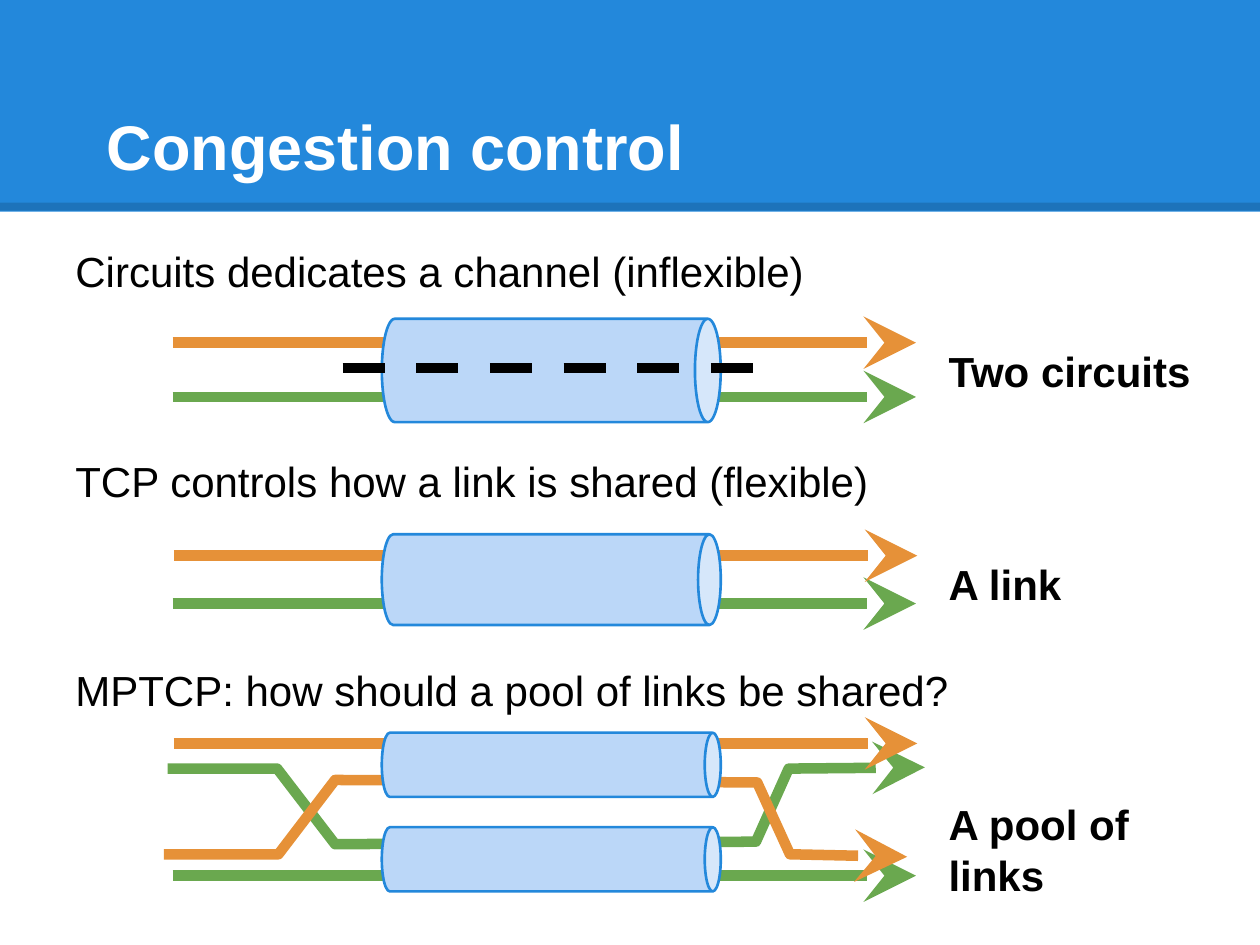
from lxml.etree import SubElement
from pptx import Presentation
from pptx.dml.color import RGBColor
from pptx.enum.dml import MSO_LINE_DASH_STYLE as DASH
from pptx.enum.shapes import MSO_CONNECTOR as CONNECTOR, MSO_SHAPE as SHAPE
from pptx.enum.text import MSO_ANCHOR as ANCHOR
from pptx.oxml.ns import qn
from pptx.util import Inches, Pt

BLUE = RGBColor(0x23, 0x88, 0xDB)
PALE_BLUE = RGBColor(0xBB, 0xD7, 0xF8)
GREEN = RGBColor(0x6A, 0xA8, 0x4F)
ORANGE = RGBColor(0xE6, 0x91, 0x38)
BLACK = RGBColor(0, 0, 0)
WHITE = RGBColor(0xFF, 0xFF, 0xFF)


class Board:
    font = "Arial"
    flow_width = 6

    def __init__(self, slide):
        self.s = slide

    def text(self, box, lines, size=24, color=BLACK, bold=False,
             anchor=ANCHOR.TOP, gap=0):
        """Add one paragraph per line, with gap points between them."""
        tf = self.s.shapes.add_textbox(*map(Inches, box)).text_frame
        tf.word_wrap = True
        tf.vertical_anchor = anchor
        tf.margin_left = tf.margin_right = Inches(0.1)
        tf.margin_top = tf.margin_bottom = Inches(0.1)
        tf.text = "\n".join(lines)
        for i, p in enumerate(tf.paragraphs):
            p.space_before = Pt(gap if i else 0)
            font = p.runs[0].font
            font.name, font.size, font.bold = self.font, Pt(size), bold
            font.color.rgb = color

    def band(self, height):
        sp = self.s.shapes.add_shape(SHAPE.RECTANGLE, 0, 0, Inches(10), Inches(height))
        sp.shadow.inherit = False
        sp.fill.solid()
        sp.fill.fore_color.rgb = BLUE
        sp.line.fill.background()

    def line(self, x1, y1, x2, y2, color, width=flow_width):
        sp = self.s.shapes.add_connector(
            CONNECTOR.STRAIGHT, *map(Inches, (x1, y1, x2, y2)))
        sp.line.color.rgb = color
        sp.line.width = Pt(width)
        SubElement(sp._element.spPr, qn("a:effectLst"))
        return sp

    def arrowhead(self, sp):
        SubElement(sp.line._get_or_add_ln(), qn("a:tailEnd"),
                   type="stealth", w="lg", len="lg")

    def flow(self, y, color, left=1.37):
        self.arrowhead(self.line(left, y, left + 5.9, y, color))

    def bent_flow(self, points, color):
        start, *rest = [(Inches(x), Inches(y)) for x, y in points]
        builder = self.s.shapes.build_freeform(*start)
        builder.add_line_segments(rest, close=False)
        sp = builder.convert_to_shape()
        sp.shadow.inherit = False
        sp.fill.background()
        sp.line.color.rgb = color
        sp.line.width = Pt(self.flow_width)
        SubElement(sp.line._get_or_add_ln(), qn("a:round"))
        self.arrowhead(sp)

    def pipe(self, center_y, thickness, center_x=4.375, length=2.69):
        """Add a can turned on its side."""
        sp = self.s.shapes.add_shape(
            SHAPE.CAN, Inches(center_x - thickness / 2),
            Inches(center_y - length / 2), Inches(thickness), Inches(length))
        sp.rotation = 90
        sp.adjustments[0] = 0.25
        sp.shadow.inherit = False
        sp.fill.solid()
        sp.fill.fore_color.rgb = PALE_BLUE
        sp.line.color.rgb = BLUE
        sp.line.width = Pt(1.5)


def main():
    prs = Presentation()
    prs.slide_width, prs.slide_height = Inches(10), Inches(7.5)
    b = Board(prs.slides.add_slide(prs.slide_layouts[6]))

    b.band(1.68)
    edge = b.line(0, 1.64, 10, 1.64, BLACK, 4.5)
    color = edge.line._get_or_add_ln().find(".//" + qn("a:srgbClr"))
    SubElement(color, qn("a:alpha"), val="15000")
    b.text((0.75, 0.3, 8.75, 1.25), ["Congestion control"], 36, WHITE, True,
           ANCHOR.BOTTOM)
    b.text((0.5, 1.85, 9, 5.43), [
        "Circuits dedicates a channel (inflexible)",
        "TCP controls how a link is shared (flexible)",
        "MPTCP: how should a pool of links be shared?",
    ], gap=91)

    # Two circuits
    b.flow(3.15, GREEN)
    b.flow(2.72, ORANGE)
    b.pipe(2.94, 0.82)
    b.line(2.72, 2.92, 6.07, 2.92, BLACK).line.dash_style = DASH.DASH

    # One shared link
    b.flow(4.79, GREEN)
    b.flow(4.41, ORANGE, 1.38)
    b.pipe(4.6, 0.72)

    # Pool of links
    b.flow(6.95, GREEN)
    b.bent_flow([(1.33, 6.1), (2.2, 6.1), (2.66, 6.7),
                 (6, 6.68), (6.26, 6.1), (7.34, 6.09)], GREEN)
    b.bent_flow([(1.3, 6.78), (2.21, 6.78), (2.66, 6.19),
                 (6.01, 6.21), (6.27, 6.78), (7.2, 6.8)], ORANGE)
    b.flow(5.9, ORANGE, 1.38)
    for center_y in (6.07, 6.82):
        b.pipe(center_y, 0.51)

    for label, top, width, height in (("Two circuits", 2.64, 2.21, 0.42),
                                      ("A link", 4.33, 2.21, 0.37),
                                      ("A pool of links", 6.24, 2.46, 0.5)):
        b.text((7.43, top, width, height), [label], bold=True)

    prs.save("out.pptx")


if __name__ == "__main__":
    main()
